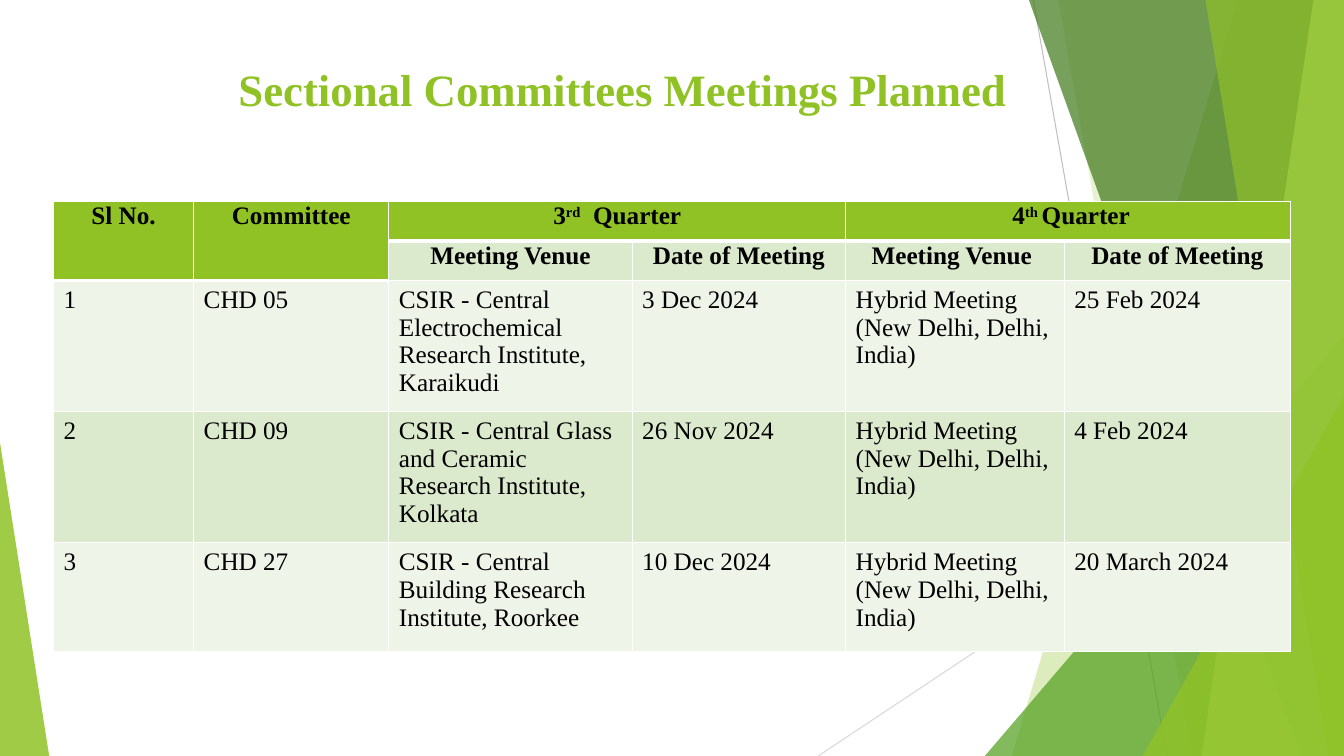
from lxml import etree
from pptx import Presentation
from pptx.dml.color import RGBColor
from pptx.enum.shapes import MSO_CONNECTOR, MSO_SHAPE
from pptx.enum.text import PP_ALIGN
from pptx.oxml import parse_xml
from pptx.oxml.ns import nsdecls, qn
from pptx.util import Cm, Pt

FONT = "Times New Roman"
GREEN, PALE, PALER = "90C226", "DBE9CD", "EEF4E8"
WIDTH, HEIGHT = 33.87, 19.05


def paint(fill, color, opacity=100):
    """Give a solid fill, with opacity in percent."""
    fill.solid()
    fill.fore_color.rgb = RGBColor.from_string(color)
    if opacity < 100:
        for tone in fill._xPr.iter(qn("a:srgbClr")):
            etree.SubElement(tone, qn("a:alpha")).set("val", str(opacity * 1000))


def write(para, text, size, color, bold):
    """Write text into a paragraph; the part between bars is superscript."""
    for number, piece in enumerate(text.split("|")):
        span = para.add_run()
        span.text = piece
        span.font.name = FONT
        span.font.size = Pt(size)
        span.font.bold = bold
        span.font.color.rgb = RGBColor.from_string(color)
        if number == 1:
            span._r.get_or_add_rPr().set("baseline", "30000")


deck = Presentation()
deck.slide_width, deck.slide_height = Cm(WIDTH), Cm(HEIGHT)
page = deck.slides.add_slide(deck.slide_layouts[6])
shapes = page.shapes

# Background rays
for start_x, start_y, end_x, color in [
    (26.04, 0, 29.41, "BFBFBF"),
    (WIDTH, 10.24, 20.62, "D9D9D9"),
]:
    ray = shapes.add_connector(
        MSO_CONNECTOR.STRAIGHT, Cm(start_x), Cm(start_y), Cm(end_x), Cm(HEIGHT))
    ray.line.width = Pt(0.75)
    ray.line.color.rgb = RGBColor.from_string(color)
    etree.SubElement(ray._element.spPr, qn("a:effectLst"))

# Facets: bands run the full height from a top x to a bottom x;
# triangles have left, top, width and the place of their tip
facets = [
    ("band", (31.19, 25.5), GREEN, 30),
    ("band", (26.67, 30.05), GREEN, 20),
    ("triangle", (24.82, 8.46, 9.05, 1), "54A021", 72),
    ("band", (25.93, 32.79), "3F7819", 70),
    ("band", (33.1, 30.28), "C0E474", 70),
    ("band", (30.38, 33.48), GREEN, 65),
    ("triangle", (28.8, 9.98, 5.07, 1), GREEN, 80),
    ("triangle", (0, 11.15, 1.24, 0), GREEN, 85),
]
for kind, place, color, opacity in facets:
    if kind == "band":
        top_x, bottom_x = place
        outline = shapes.build_freeform(Cm(top_x), Cm(0))
        outline.add_line_segments([
            (Cm(WIDTH), Cm(0)), (Cm(WIDTH), Cm(HEIGHT)), (Cm(bottom_x), Cm(HEIGHT))])
        facet = outline.convert_to_shape()
    else:
        left, top, width, tip = place
        facet = shapes.add_shape(
            MSO_SHAPE.ISOSCELES_TRIANGLE,
            Cm(left), Cm(top), Cm(width), Cm(HEIGHT - top))
        facet.adjustments[0] = tip
    paint(facet.fill, color, opacity)
    facet.line.fill.background()
    facet.shadow.inherit = False

# Title
title = shapes.add_textbox(Cm(2.31), Cm(1.42), Cm(27.05), Cm(3.66))
title.text_frame.word_wrap = True
para = title.text_frame.paragraphs[0]
para.alignment = PP_ALIGN.CENTER
write(para, "Sectional Committees Meetings Planned ", 32, GREEN, True)

# Meetings table
hybrid = "Hybrid Meeting (New Delhi, Delhi, India)"
rows = [
    ["Sl No.", "Committee", "3|rd|  Quarter", "", " 4|th |Quarter", ""],
    ["", "", "Meeting Venue", "Date of Meeting", "Meeting Venue ", "Date of Meeting"],
    ["1", "CHD 05", "CSIR - Central Electrochemical Research Institute, Karaikudi",
     "3 Dec 2024", hybrid, "25 Feb 2024"],
    ["2", "CHD 09", "CSIR - Central Glass and Ceramic Research Institute, Kolkata",
     "26 Nov 2024", hybrid, "4 Feb 2024"],
    ["3", "CHD 27", "CSIR - Central Building Research Institute, Roorkee",
     "10 Dec 2024", hybrid, "20 March 2024"],
]
column_widths = [3.53, 4.92, 6.13, 5.38, 5.51, 5.7]
row_heights = [1, 0.99, 3.07, 3.07, 2.74]
row_fills = [GREEN, PALE, PALER, PALE, PALER]
table = shapes.add_table(
    len(rows), len(column_widths), Cm(1.35), Cm(5.08),
    Cm(sum(column_widths)), Cm(sum(row_heights))).table
for column, width in zip(table.columns, column_widths):
    column.width = Cm(width)
for row, height in zip(table.rows, row_heights):
    row.height = Cm(height)
for first, last in [((0, 0), (1, 0)), ((0, 1), (1, 1)), ((0, 2), (0, 3)), ((0, 4), (0, 5))]:
    table.cell(*first).merge(table.cell(*last))

for r, texts in enumerate(rows):
    for c, text in enumerate(texts):
        cell = table.cell(r, c)
        heading = r < 2
        header_end = 1 if c < 2 else 0
        for side in "LRTB":
            thick = (side, r) in [("B", header_end), ("T", header_end + 1)]
            cell._tc.get_or_add_tcPr().append(parse_xml(
                f'<a:ln{side} {nsdecls("a")} w="{Pt(3 if thick else 1)}"><a:solidFill>'
                f'<a:srgbClr val="FFFFFF"/></a:solidFill></a:ln{side}>'))
        paint(cell.fill, GREEN if r <= header_end else row_fills[r])
        if heading:
            cell.margin_left = cell.margin_right = Cm(0.02)
            cell.margin_top = cell.margin_bottom = Cm(0.02)
        if text:
            para = cell.text_frame.paragraphs[0]
            para.alignment = PP_ALIGN.CENTER if heading else PP_ALIGN.LEFT
            write(para, text, 18, "000000", heading)

deck.save("out.pptx")
